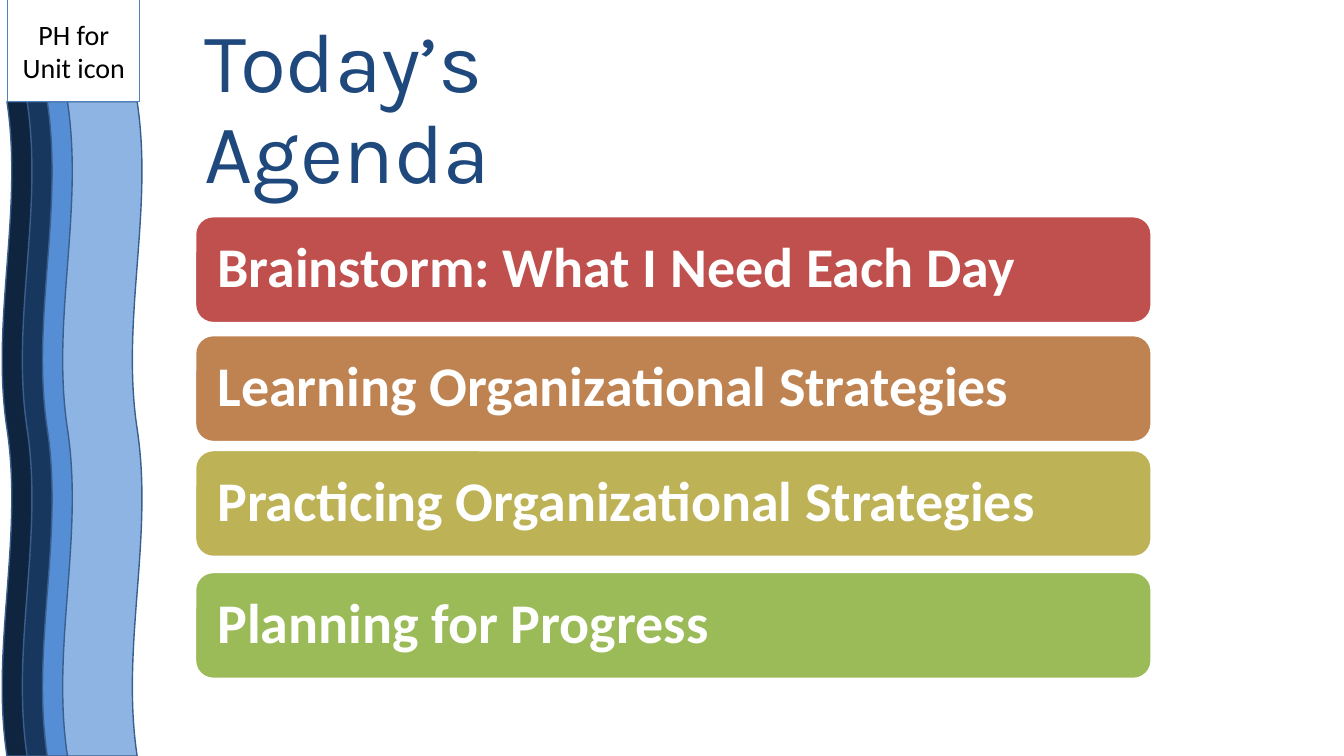
from pptx import Presentation
from pptx.dml.color import RGBColor as RGB
from pptx.enum.shapes import MSO_SHAPE as Shape
from pptx.enum.text import MSO_ANCHOR as Anchor, MSO_AUTO_SIZE as Fit, PP_ALIGN as Align
from pptx.util import Pt

WHITE = RGB(0xFF, 0xFF, 0xFF)
BLACK = RGB(0x00, 0x00, 0x00)
NAVY = RGB(0x1F, 0x49, 0x7D)
EDGE = RGB(0x3A, 0x5F, 0x8C)
BLUE = RGB(0x4F, 0x81, 0xBD)
WAVES = [RGB(0x0F, 0x24, 0x3E), RGB(0x17, 0x37, 0x5E),
         RGB(0x55, 0x8E, 0xD5), RGB(0x8E, 0xB4, 0xE3)]
RED = RGB(0xC0, 0x50, 0x4D)
BROWN = RGB(0xBE, 0x83, 0x51)
GOLD = RGB(0xBD, 0xB2, 0x55)
GREEN = RGB(0x9B, 0xBB, 0x59)

deck = Presentation()
deck.slide_width = Pt(960)
deck.slide_height = Pt(540)
slide = deck.slides.add_slide(deck.slide_layouts[5])
slide.background.fill.solid()
slide.background.fill.fore_color.rgb = WHITE


def draw(kind, left, top, width, height, fill, edge, weight):
    shape = slide.shapes.add_shape(kind, Pt(left), Pt(top), Pt(width), Pt(height))
    shape.shadow.inherit = False
    shape.fill.solid()
    shape.fill.fore_color.rgb = fill
    shape.line.color.rgb = edge
    shape.line.width = Pt(weight)
    return shape


def write(shape, text, face, size, color, align):
    frame = shape.text_frame
    frame.text = text
    frame.word_wrap = True
    frame.auto_size = Fit.NONE
    frame.vertical_anchor = Anchor.MIDDLE
    para = frame.paragraphs[0]
    para.alignment = align
    para.font.name = face
    para.font.size = Pt(size)
    para.font.color.rgb = color
    return para


for i, color in enumerate(WAVES):
    wave = draw(Shape.DOUBLE_WAVE, -203.76 + 14.4 * i, 277.92, 467.28, 56.88, color, EDGE, 1)
    wave.rotation = 270

icon = draw(Shape.RECTANGLE, 5.5, 0, 94.5, 72.5, WHITE, BLUE, 0.75)
write(icon, "PH for Unit icon", "Calibri", 20, BLACK, Align.CENTER)

title = slide.shapes.title
title.left, title.top, title.width, title.height = Pt(139), Pt(28), Pt(429), Pt(102)
write(title, "Today’s Agenda", "Karla", 60, NAVY, Align.LEFT).line_spacing = 0.9

agenda = [
    (154.8, RED, "Brainstorm: What I Need Each Day"),
    (239.76, BROWN, "Learning Organizational Strategies"),
    (321.84, GOLD, "Practicing Organizational Strategies"),
    (408.96, GREEN, "Planning for Progress"),
]
for top, color, text in agenda:
    bar = draw(Shape.ROUNDED_RECTANGLE, 139.68, top, 682.56, 75.6, color, WHITE, 1)
    bar.text_frame.margin_left = bar.text_frame.margin_right = Pt(12)
    para = write(bar, text, "Calibri", 40, WHITE, Align.LEFT)
    para.font.bold = True
    para.line_spacing = 0.9

deck.save("out.pptx")
